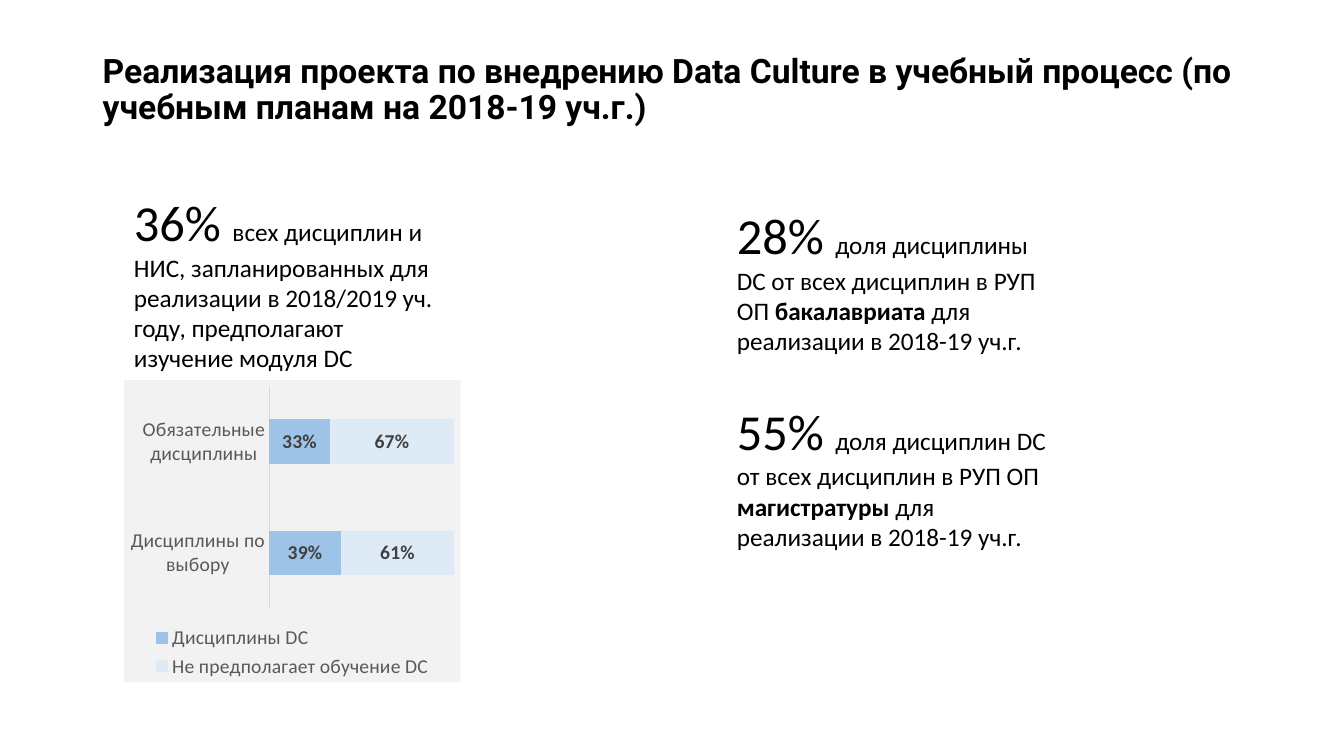
import pptx
import pptx.chart.data
import pptx.dml.color
import pptx.enum.chart
import pptx.enum.text
import pptx.util
from lxml import etree
from pptx.oxml import parse_xml

Inches, Pt = pptx.util.Inches, pptx.util.Pt
RGBColor = pptx.dml.color.RGBColor

BLACK = RGBColor(0x00, 0x00, 0x00)
DARK_GREY = RGBColor(0x40, 0x40, 0x40)
GREY = RGBColor(0x59, 0x59, 0x59)
AXIS_GREY = RGBColor(0xD9, 0xD9, 0xD9)
PANEL_GREY = RGBColor(0xF2, 0xF2, 0xF2)
BLUE = RGBColor(0x9D, 0xC3, 0xE6)
PALE_BLUE = RGBColor(0xDE, 0xEB, 0xF7)

# Content
TITLE = ("Реализация проекта по внедрению Data Culture в учебный процесс "
         "(по учебным планам на 2018-19 уч.г.)")
TITLE_AREA = (0.92, 0.26, 11.5, 1.28)

# Each fact: area, then runs of (text, size, bold)
FACTS = [
    ((1.23, 1.85, 3.28, 1.92), [
        ("36% ", 36, False),
        ("всех дисциплин и НИС, запланированных для реализации в 2018/2019 "
         "уч. году, предполагают изучение модуля DC", 18, False)]),
    ((7.21, 1.98, 3.29, 1.62), [
        ("28% ", 36, False),
        ("доля дисциплины DC от всех дисциплин в РУП ОП ", 18, False),
        ("бакалавриата", 18, True),
        (" для реализации в 2018-19 уч.г.", 18, False)]),
    ((7.21, 3.92, 3.29, 1.62), [
        ("55% ", 36, False),
        ("доля дисциплин DC от всех дисциплин в РУП ОП ", 18, False),
        ("магистратуры", 18, True),
        (" для реализации в 2018-19 уч.г.", 18, False)]),
]

CHART_AREA = (1.23, 3.77, 3.34, 3)
CATEGORIES = ["Дисциплины по выбору", "Обязательные дисциплины"]
SERIES = [
    ("Дисциплины DC", (0.39, 0.33), BLUE),
    ("Не предполагает обучение DC", (0.61, 0.67), PALE_BLUE),
]


def set_font(font, size, color=BLACK, bold=False, name="Calibri"):
    font.name = name
    font.size = Pt(size)
    font.bold = bold
    font.color.rgb = color


def add_text(page, area, runs, name="Calibri"):
    box = page.shapes.add_textbox(*map(Inches, area))
    box.text_frame.word_wrap = True
    para = box.text_frame.paragraphs[0]
    for text, size, bold in runs:
        span = para.add_run()
        span.text = text
        set_font(span.font, size, bold=bold, name=name)
    return box


def fill_chart_area(chart, color):
    """Paint the chart background without a border."""
    properties = parse_xml(
        '<c:spPr xmlns:c="http://schemas.openxmlformats.org/drawingml/2006/chart"'
        ' xmlns:a="http://schemas.openxmlformats.org/drawingml/2006/main">'
        f'<a:solidFill><a:srgbClr val="{color}"/></a:solidFill>'
        '<a:ln><a:noFill/></a:ln></c:spPr>')
    chart.element.chart.addnext(properties)


def add_share_chart(page):
    chart_data = pptx.chart.data.CategoryChartData(number_format="0%")
    chart_data.categories = CATEGORIES
    for name, values, _ in SERIES:
        chart_data.add_series(name, values)
    chart = page.shapes.add_chart(
        pptx.enum.chart.XL_CHART_TYPE.BAR_STACKED_100,
        *map(Inches, CHART_AREA), chart_data).chart
    set_font(chart.font, 10)
    chart.has_title = False
    fill_chart_area(chart, PANEL_GREY)

    # Bars and their labels
    plot = chart.plots[0]
    plot.gap_width = 150
    plot.overlap = 100
    plot.vary_by_categories = False
    for series, (_, _, color) in zip(plot.series, SERIES):
        series.format.fill.solid()
        series.format.fill.fore_color.rgb = color
        labels = series.data_labels
        labels.show_value = True
        labels.number_format = "0%"
        labels.number_format_is_linked = False
        set_font(labels.font, 14, DARK_GREY, bold=True)

    # Axes
    axis = chart.category_axis
    axis.major_tick_mark = pptx.enum.chart.XL_TICK_MARK.NONE
    axis.format.line.color.rgb = AXIS_GREY
    axis.format.line.width = Pt(0.75)
    set_font(axis.tick_labels.font, 14, GREY)
    chart.value_axis.visible = False
    chart.value_axis.has_major_gridlines = False

    # Legend
    chart.has_legend = True
    chart.legend.position = pptx.enum.chart.XL_LEGEND_POSITION.BOTTOM
    chart.legend.include_in_layout = False
    set_font(chart.legend.font, 14, GREY)


def main():
    deck = pptx.Presentation()
    deck.slide_width, deck.slide_height = Inches(13.33), Inches(7.5)
    page = deck.slides.add_slide(deck.slide_layouts[6])

    # Title
    title = add_text(page, TITLE_AREA, [(TITLE, 24, True)], "Roboto")
    title.text_frame.vertical_anchor = pptx.enum.text.MSO_ANCHOR.MIDDLE
    title.text_frame.paragraphs[0].line_spacing = 0.9

    # Chart and key figures
    add_share_chart(page)
    for area, runs in FACTS:
        box = add_text(page, area, runs)
        box.text_frame.auto_size = pptx.enum.text.MSO_AUTO_SIZE.SHAPE_TO_FIT_TEXT

    deck.save("out.pptx")


if __name__ == "__main__":
    main()
